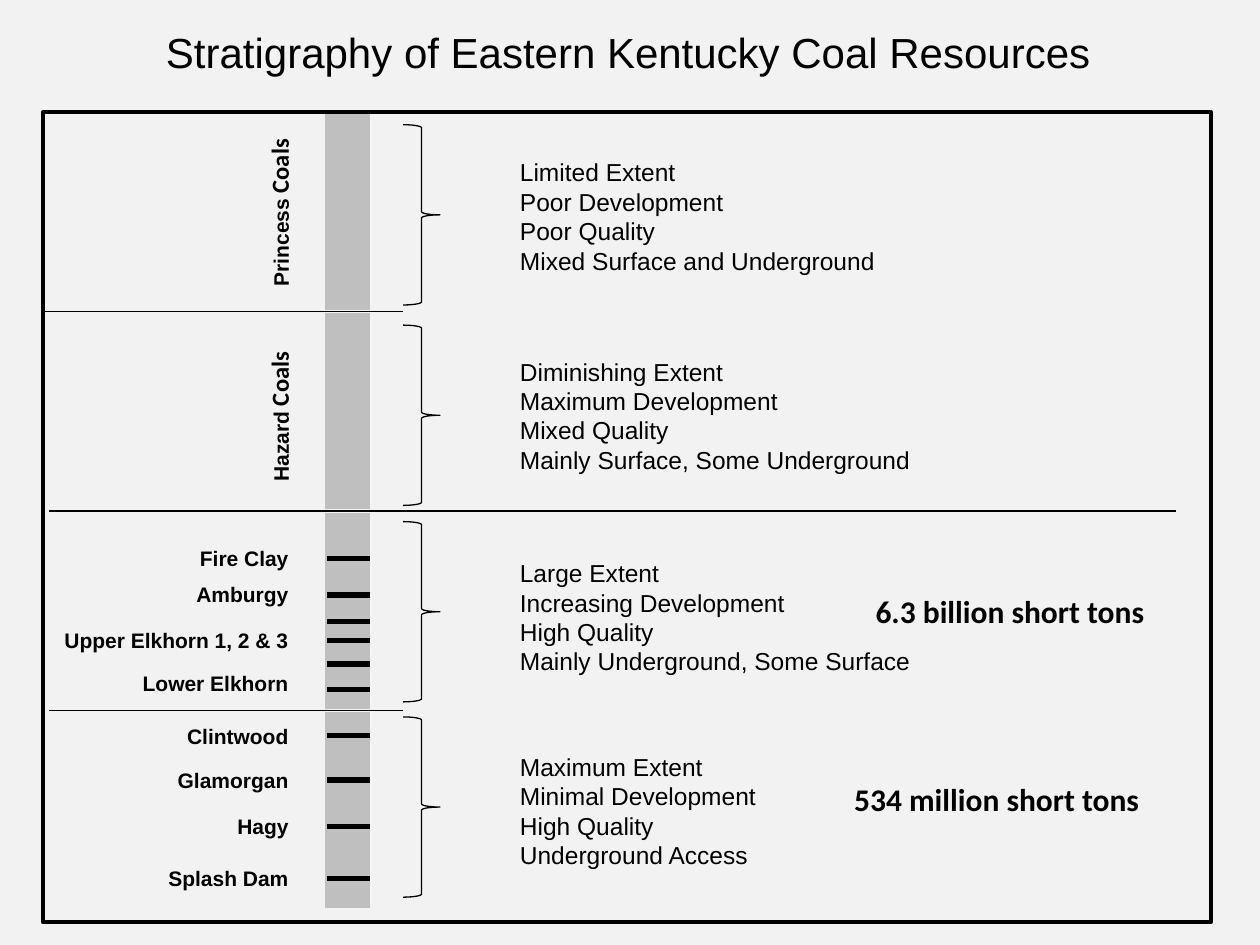
from dataclasses import dataclass
from lxml import etree
from pptx import Presentation
from pptx.dml.color import RGBColor
from pptx.enum import shapes as sh, text as tx
from pptx.oxml import ns
from pptx.util import Pt


@dataclass(frozen=True)
class Theme:
    ink: str = "000000"
    back: str = "F2F2F2"
    rock: str = "BFBFBF"
    sans: str = "Arial"
    alt: str = "Calibri"
    head: int = 24
    total: int = 18
    body: int = 14
    label: int = 12
    thin: float = 0.75
    frame: float = 2
    seam: float = 3


T = Theme()
TOP, STEP = 64, 114
COL, WIDE = 185, 27.5

UNITS = [
    (71.3, 86.4, 218, ["Limited Extent", "Poor Development", "Poor Quality",
                       "Mixed Surface and Underground"]),
    (185.8, 200.2, 238, ["Diminishing Extent", "Maximum Development", "Mixed Quality",
                         "Mainly Surface, Some Underground"]),
    (298.1, 315.4, 238, ["Large Extent", "Increasing Development", "High Quality",
                         "Mainly Underground, Some Surface"]),
    (409.7, 426.2, 150, ["Maximum Extent", "Minimal Development", "High Quality",
                         "Underground Access"]),
]
SEAMS = [319, 340, 355, 366, 379.5, 394, 420.5, 445.7, 472.3, 501.8]
NAMES = [
    ("Fire Clay", 308.2, 65.5), ("Amburgy", 329, 67.7),
    ("Upper Elkhorn 1, 2 & 3", 355, 144), ("Lower Elkhorn", 379.4, 98.6),
    ("Clintwood", 409.7, 73.4), ("Glamorgan", 434.9, 78.5),
    ("Hagy", 461.5, 43.9), ("Splash Dam", 491, 83.5),
]
GROUPS = [("Princess", 121, 99.4), ("Hazard", 237.6, 89.3)]
TOTALS = [("534 million short tons", 481, 442, 178.6),
          ("6.3 billion short tons", 493.2, 334.8, 169.2)]
RULES = [(24.5, 230.4), (28, 671.8), (28, 230.4)]


def color(code):
    return RGBColor.from_string(code)


def style(font, size, face, bold=False):
    font.size, font.name, font.bold = Pt(size), face, bold
    font.color.rgb = color(T.ink)


def frame(slide, x, y, w, h):
    box = slide.shapes.add_textbox(Pt(x), Pt(y), Pt(w), Pt(h))
    box.text_frame.word_wrap = False
    box.text_frame.auto_size = tx.MSO_AUTO_SIZE.SHAPE_TO_FIT_TEXT
    return box


def write(slide, lines, x, y, w, h, size, face=T.sans, bold=False,
          align=tx.PP_ALIGN.LEFT):
    body = frame(slide, x, y, w, h).text_frame
    body.text = "\n".join(lines)
    for para in body.paragraphs:
        para.alignment = align
        style(para.font, size, face, bold)


def group(slide, name, mid, w):
    h = 24.5
    box = frame(slide, 159.8 - w / 2, mid - h / 2, w, h)
    box.rotation = 270
    para = box.text_frame.paragraphs[0]
    for words, size, face in [(name, T.label, T.sans), (" Coals", T.body, T.alt)]:
        run = para.add_run()
        run.text = words
        style(run.font, size, face, True)


def shape(slide, kind, x, y, w, h, line, width, fill=None):
    item = slide.shapes.add_shape(kind, Pt(x), Pt(y), Pt(w), Pt(h))
    item.shadow.inherit = False
    if fill:
        item.fill.solid()
        item.fill.fore_color.rgb = color(fill)
    else:
        item.fill.background()
    item.line.color.rgb = color(line)
    item.line.width = Pt(width)


def rule(slide, x, end, y, width):
    item = slide.shapes.add_connector(sh.MSO_CONNECTOR.STRAIGHT,
                                      Pt(x), Pt(y), Pt(end), Pt(y))
    item.line.color.rgb = color(T.ink)
    item.line.width = Pt(width)
    etree.SubElement(item._element.spPr, ns.qn("a:effectLst"))


def main():
    deck = Presentation()
    deck.slide_width, deck.slide_height = Pt(720), Pt(540)
    slide = deck.slides.add_slide(deck.slide_layouts[6])
    slide.background.fill.solid()
    slide.background.fill.fore_color.rgb = color(T.back)
    kind = sh.MSO_SHAPE

    write(slide, ["Stratigraphy of Eastern Kentucky Coal Resources"],
          87.8, 11.5, 548, 36, T.head)
    for i in reversed(range(len(UNITS))):
        shape(slide, kind.RECTANGLE, COL, TOP + i * STEP, WIDE, STEP,
              T.back, T.frame, T.rock)
    for y in SEAMS:
        rule(slide, 187, 211.5, y, T.seam)
    for name, mid, w in GROUPS:
        group(slide, name, mid, w)
    for name, y, w in NAMES:
        write(slide, [name], 172 - w, y, w, 21.8, T.label, bold=True,
              align=tx.PP_ALIGN.RIGHT)
    for brace, y, w, lines in UNITS:
        shape(slide, kind.RIGHT_BRACE, 230.4, brace, 21, 103, T.ink, T.thin)
        write(slide, lines, 290, y, w, 75, T.body)
    for i, (x, end) in enumerate(RULES, 1):
        rule(slide, x, end, TOP + i * STEP, T.thin)
    shape(slide, kind.RECTANGLE, 24.5, TOP, 667.5, 463, T.ink, T.frame)
    for words, x, y, w in TOTALS:
        write(slide, [words], x, y, w, 29, T.total, T.alt, True)
    deck.save("out.pptx")


if __name__ == "__main__":
    main()
